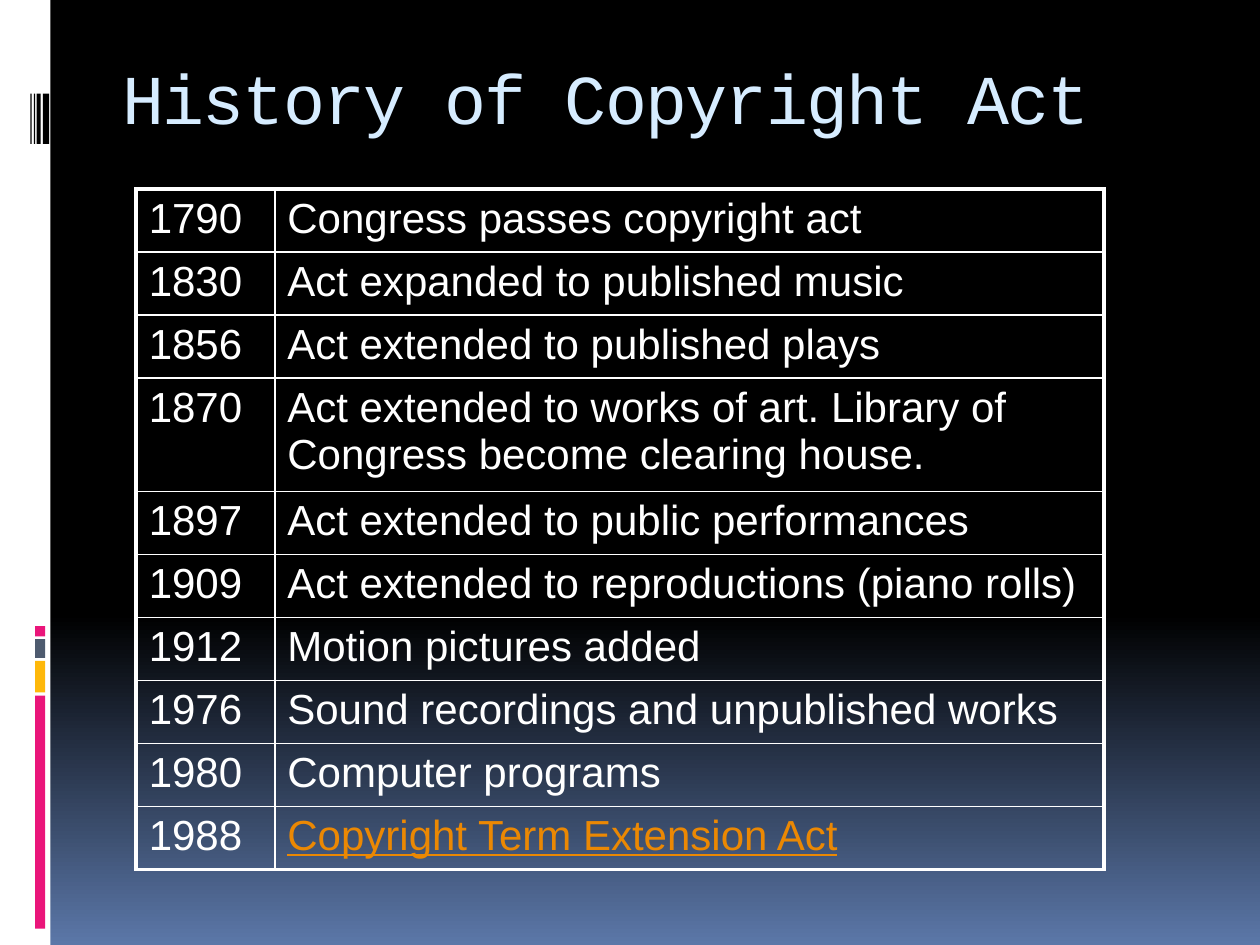
from copy import deepcopy

from lxml.etree import SubElement
from pptx import Presentation
from pptx.dml.color import RGBColor
from pptx.enum.shapes import MSO_SHAPE
from pptx.enum.text import MSO_ANCHOR, PP_ALIGN
from pptx.oxml.ns import qn
from pptx.util import Pt

WHITE = "FFFFFF"
BLACK = "000000"
PINK = "EA157A"
LINK = "EB8803"
BACKGROUND_STOPS = [(0, BLACK), (0.65, BLACK), (1, "5B77A8")]
SIDEBAR_BARS = [
    (0, 0, 28.8, 540, WHITE),
    (24.5, 53.5, 3.6, 28.8, BLACK),
    (21, 53.5, 2.2, 28.8, BLACK),
    (19.4, 53.5, 0.7, 28.8, BLACK),
    (17.4, 53.5, 0.7, 28.8, BLACK),
    (20, 397.5, 5.8, 133.2, PINK),
    (20, 377.7, 5.8, 18, "FEB80A"),
    (20, 365.2, 5.8, 10.8, "4E5B6F"),
    (20, 357.8, 5.8, 5.8, PINK),
]
HISTORY = [
    ("1790", "Congress passes copyright act"),
    ("1830", "Act expanded to published music"),
    ("1856", "Act extended to published plays"),
    ("1870", "Act extended to works of art. Library of Congress become clearing house."),
    ("1897", "Act extended to public performances"),
    ("1909", "Act extended to reproductions (piano rolls)"),
    ("1912", "Motion pictures added"),
    ("1976", "Sound recordings and unpublished works"),
    ("1980", "Computer programs"),
    ("1988", "Copyright Term Extension Act"),
]
COLUMN_WIDTHS = (79.2, 473.8)
ROW_HEIGHT = 36
TALL_ROW_HEIGHT = 64.8
TALL_YEAR = "1870"


def set_color(color_format, value):
    """Apply a hex colour to a colour format."""
    color_format.rgb = RGBColor.from_string(value)


def format_font(font, name, size, color):
    """Set the typeface, size and colour of a font."""
    font.name = name
    font.size = Pt(size)
    font.bold = False
    set_color(font.color, color)


def paint_background(slide):
    """Fill the slide from black at the top to blue at the bottom."""
    fill = slide.background.fill
    fill.gradient()
    fill.gradient_angle = 270
    stop_list = fill._fill._gradFill.find(qn("a:gsLst"))
    stop_list.insert(1, deepcopy(stop_list[0]))
    for stop, (position, color) in zip(fill.gradient_stops, BACKGROUND_STOPS):
        stop.position = position
        set_color(stop.color, color)


def add_bar(slide, left, top, width, height, color):
    """Add a plain rectangle without outline."""
    bar = slide.shapes.add_shape(
        MSO_SHAPE.RECTANGLE, Pt(left), Pt(top), Pt(width), Pt(height)
    )
    bar.shadow.inherit = False
    bar.fill.solid()
    set_color(bar.fill.fore_color, color)
    bar.line.fill.background()


def write_title(slide, text):
    """Place and format the title."""
    title = slide.shapes.title
    title.left, title.top, title.width, title.height = map(Pt, (62.6, 18, 660, 113))
    frame = title.text_frame
    frame.text = text
    frame.vertical_anchor = MSO_ANCHOR.TOP
    frame.margin_top = Pt(13)
    paragraph = frame.paragraphs[0]
    paragraph.alignment = PP_ALIGN.LEFT
    run = paragraph.runs[0]
    format_font(run.font, "Courier New", 40, "D6ECFF")
    run.font._element.set("spc", "-100")


def set_borders(cell, widths):
    """Draw white left, right, top and bottom cell borders."""
    properties = cell._tc.get_or_add_tcPr()
    for side, width in zip("LRTB", widths):
        line = SubElement(properties, qn(f"a:ln{side}"), w=str(Pt(width)))
        solid = SubElement(line, qn("a:solidFill"))
        SubElement(solid, qn("a:srgbClr"), val=WHITE)


def write_cell(cell, text, color):
    """Write one transparent table cell."""
    cell.text = text
    cell.fill.background()
    format_font(cell.text_frame.paragraphs[0].runs[0].font, "Arial", 24, color)


def add_history_table(slide):
    """Add the table of years with a heavy outer frame."""
    frame = slide.shapes.add_table(
        len(HISTORY), 2, Pt(77.8), Pt(108), Pt(sum(COLUMN_WIDTHS)), Pt(388.8)
    )
    table = frame.table
    table.first_row = table.horz_banding = False
    for column, width in zip(table.columns, COLUMN_WIDTHS):
        column.width = Pt(width)
    last = len(HISTORY) - 1
    for row_index, entry in enumerate(HISTORY):
        height = TALL_ROW_HEIGHT if entry[0] == TALL_YEAR else ROW_HEIGHT
        table.rows[row_index].height = Pt(height)
        for column_index, text in enumerate(entry):
            cell = table.cell(row_index, column_index)
            outer = (column_index == 0, column_index == 1, row_index == 0, row_index == last)
            set_borders(cell, [2.25 if edge else 1 for edge in outer])
            is_link = row_index == last and column_index == 1
            write_cell(cell, text, LINK if is_link else WHITE)
            cell.text_frame.paragraphs[0].runs[0].font.underline = is_link


def main():
    """Build and save the slide."""
    presentation = Presentation()
    presentation.slide_width, presentation.slide_height = Pt(720), Pt(540)
    slide = presentation.slides.add_slide(presentation.slide_layouts[5])
    paint_background(slide)
    for bar in SIDEBAR_BARS:
        add_bar(slide, *bar)
    write_title(slide, "History of Copyright Act")
    add_history_table(slide)
    presentation.save("out.pptx")


if __name__ == "__main__":
    main()
